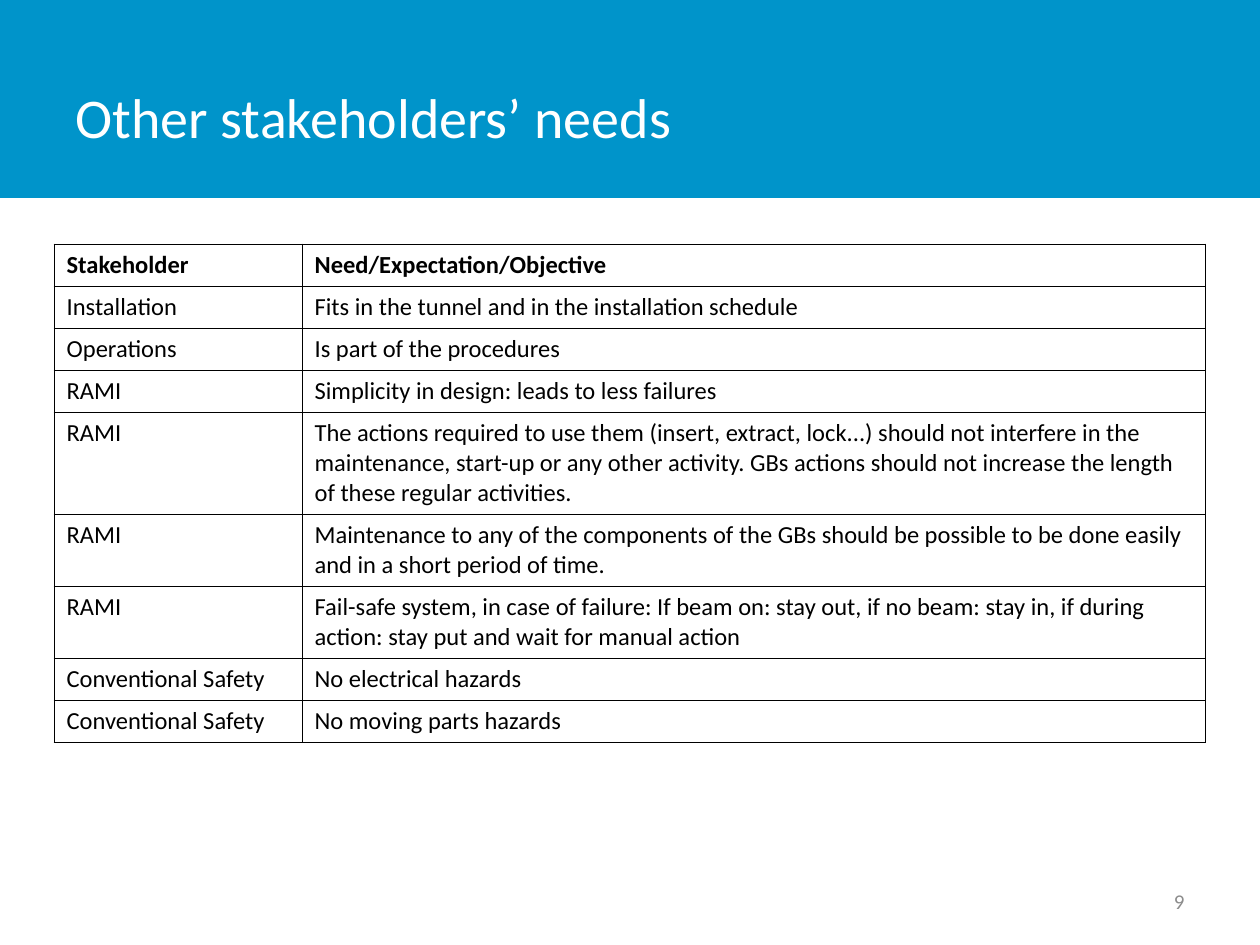
import pptx
import pptx.dml.color
import pptx.enum.shapes
import pptx.enum.text
import pptx.oxml
import pptx.oxml.ns
import pptx.util

RGBColor = pptx.dml.color.RGBColor
PP_ALIGN = pptx.enum.text.PP_ALIGN

EMU_PER_PX = 914400 / 126
FONT = "Calibri"
BLUE = RGBColor(0x00, 0x94, 0xCA)
WHITE = RGBColor(0xFF, 0xFF, 0xFF)
BLACK = RGBColor(0x00, 0x00, 0x00)
GRAY = RGBColor(0x8C, 0x8C, 0x8C)

COLUMN_WIDTHS = (248, 903)
LINE_HEIGHT = 30
CELL_PADDING = 12

# Stakeholder, need, number of text lines
NEEDS = [
    ("Stakeholder", "Need/Expectation/Objective", 1),
    ("Installation", "Fits in the tunnel and in the installation schedule", 1),
    ("Operations", "Is part of the procedures", 1),
    ("RAMI", "Simplicity in design: leads to less failures", 1),
    ("RAMI", "The actions required to use them (insert, extract, lock...) should not "
             "interfere in the maintenance, start-up or any other activity. GBs actions "
             "should not increase the length of these regular activities.", 3),
    ("RAMI", "Maintenance to any of the components of the GBs should be possible to be "
             "done easily and in a short period of time.", 2),
    ("RAMI", "Fail-safe system, in case of failure: If beam on: stay out, if no beam: "
             "stay in, if during action: stay put and wait for manual action", 2),
    ("Conventional Safety", "No electrical hazards", 1),
    ("Conventional Safety", "No moving parts hazards", 1),
]


def px(length):
    return pptx.util.Emu(round(length * EMU_PER_PX))


def write(frame, text, size, color, bold=False, align=PP_ALIGN.LEFT):
    para = frame.paragraphs[0]
    para.alignment = align
    span = para.add_run()
    span.text = text
    span.font.name = FONT
    span.font.size = pptx.util.Pt(size)
    span.font.bold = bold
    span.font.color.rgb = color


def add_band(page, left, top, width, height):
    band = page.shapes.add_shape(pptx.enum.shapes.MSO_SHAPE.RECTANGLE,
                                 px(left), px(top), px(width), px(height))
    band.shadow.inherit = False
    band.fill.solid()
    band.fill.fore_color.rgb = BLUE
    band.line.fill.background()


def add_text(page, left, top, width, height, text, size, color, align=PP_ALIGN.LEFT):
    box = page.shapes.add_textbox(px(left), px(top), px(width), px(height))
    frame = box.text_frame
    frame.word_wrap = True
    frame.vertical_anchor = pptx.enum.text.MSO_ANCHOR.MIDDLE
    write(frame, text, size, color, align=align)


def add_borders(cell):
    """Draw a thin black line on all four sides of the cell."""
    properties = cell._tc.get_or_add_tcPr()
    for position, side in enumerate(("lnL", "lnR", "lnT", "lnB")):
        properties.insert(position, pptx.oxml.parse_xml(
            f'<a:{side} {pptx.oxml.ns.nsdecls("a")} w="{pptx.util.Pt(0.5)}">'
            f'<a:solidFill><a:srgbClr val="{BLACK}"/></a:solidFill></a:{side}>'))


def add_needs_table(page, left, top):
    heights = [lines * LINE_HEIGHT + CELL_PADDING for _, _, lines in NEEDS]
    table = page.shapes.add_table(len(NEEDS), len(COLUMN_WIDTHS), px(left), px(top),
                                  px(sum(COLUMN_WIDTHS)), px(sum(heights))).table
    table.horz_banding = False
    for column, width in zip(table.columns, COLUMN_WIDTHS):
        column.width = px(width)
    for index, (row, height) in enumerate(zip(table.rows, heights)):
        row.height = px(height)
        for cell, text in zip(row.cells, NEEDS[index]):
            cell.fill.background()
            add_borders(cell)
            write(cell.text_frame, text, 14, BLACK, bold=index == 0)


def main():
    deck = pptx.Presentation()
    deck.slide_width = px(1260)
    deck.slide_height = px(945)
    page = deck.slides.add_slide(deck.slide_layouts[6])
    add_band(page, 0, 0, 1260, 198)
    add_text(page, 63, 38, 984, 157, "Other stakeholders’ needs", 32, WHITE)
    add_needs_table(page, 54, 244)
    add_text(page, 903, 876, 294, 50, "9", 12, GRAY, PP_ALIGN.RIGHT)
    deck.save("out.pptx")


if __name__ == "__main__":
    main()
